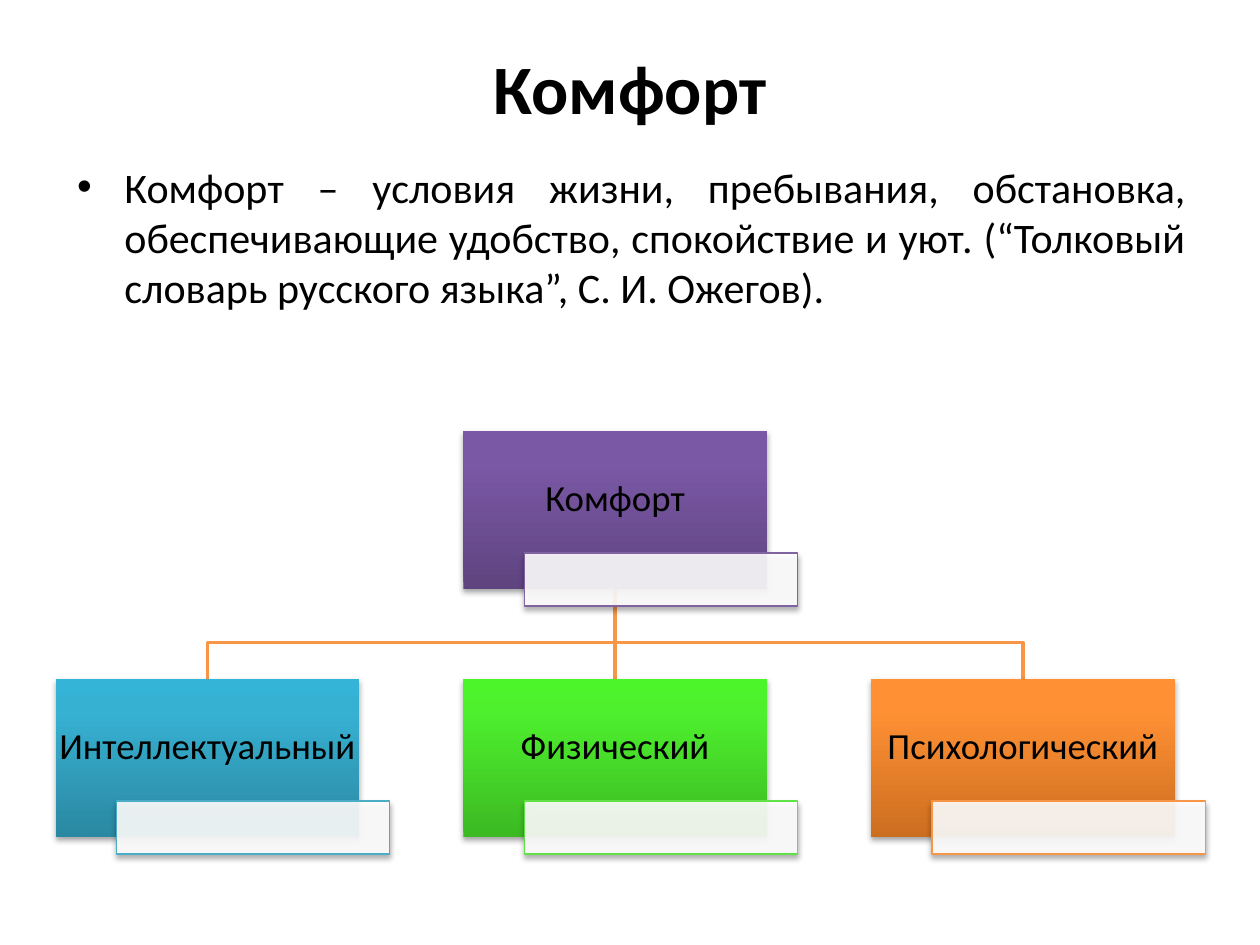
"""Build the slide on comfort and its three kinds."""
from lxml import etree
from pptx import Presentation
from pptx.dml.color import RGBColor
from pptx.enum.shapes import MSO_CONNECTOR, MSO_SHAPE
from pptx.enum.text import MSO_ANCHOR, PP_ALIGN
from pptx.oxml.ns import qn
from pptx.util import Cm, Pt

RECTANGLE, STRAIGHT = MSO_SHAPE.RECTANGLE, MSO_CONNECTOR.STRAIGHT
CENTER, JUSTIFY, MIDDLE = PP_ALIGN.CENTER, PP_ALIGN.JUSTIFY, MSO_ANCHOR.MIDDLE

TITLE = "Комфорт"
DEFINITION = (
    "Комфорт – условия жизни, пребывания, обстановка, обеспечивающие удобство, "
    "спокойствие и уют. (“Толковый словарь русского языка”, С. И. Ожегов)."
)
ROOT = ("Комфорт", "purple")
KINDS = [("Интеллектуальный", "blue"), ("Физический", "green"), ("Психологический", "orange")]

COLORS = {"text": "000000", "shadow": "000000", "tag": "FFFFFF", "branch": "F79646"}
GRADIENTS = {
    "purple": ("5F4480", "7B58A6", "7C57A8"),
    "blue": ("2A88A2", "37B1D2", "34B4D6"),
    "green": ("3CB923", "4EF02E", "4CF52A"),
    "orange": ("CC6E20", "FF9034", "FF9136"),
}
OUTLINES = {"purple": "8064A2", "blue": "4BACC6", "green": "60E146", "orange": "F79646"}
STOPS = (0, 80000, 100000)

BOX_WIDTH, BOX_HEIGHT = 6.12, 3.18
TAG_WIDTH, TAG_HEIGHT = 5.51, 1.07
TAG_RIGHT, TAG_DOWN = 1.23, 2.46
LEFT, STEP = 1.12, 8.22
ROOT_TOP, KINDS_TOP, BEND = 8.69, 13.69, 12.95


def rgb(hex_color):
    return RGBColor.from_string(hex_color)


def add_color(parent, hex_color, alpha=None):
    color = etree.SubElement(parent, qn("a:srgbClr"), val=hex_color)
    if alpha:
        etree.SubElement(color, qn("a:alpha"), val=str(alpha))


def add_shadow(shape):
    shape.shadow.inherit = False
    effects = shape._element.spPr.find(qn("a:effectLst"))
    shadow = etree.SubElement(
        effects, qn("a:outerShdw"), blurRad="40000", dist="23000", dir="5400000", rotWithShape="0"
    )
    add_color(shadow, COLORS["shadow"], 35000)


def format_text(frame, text, size, align, bold=False):
    frame.text = text
    paragraph = frame.paragraphs[0]
    paragraph.alignment = align
    font = paragraph.runs[0].font
    font.name, font.size, font.bold = "Calibri", Pt(size), bold
    font.color.rgb = rgb(COLORS["text"])
    return paragraph


def place(placeholder, left, top, width, height):
    placeholder.left, placeholder.top = Cm(left), Cm(top)
    placeholder.width, placeholder.height = Cm(width), Cm(height)


def add_rectangle(shapes, left, top, width, height):
    rectangle = shapes.add_shape(RECTANGLE, Cm(left), Cm(top), Cm(width), Cm(height))
    add_shadow(rectangle)
    return rectangle


def add_node(shapes, label, hue, left, top):
    box = add_rectangle(shapes, left, top, BOX_WIDTH, BOX_HEIGHT)
    box.line.fill.background()
    box.fill.gradient()
    box.fill.gradient_angle = 90
    stops = box._element.spPr.find(f".//{qn('a:gsLst')}")
    stops[:] = []
    for position, hex_color in zip(STOPS, GRADIENTS[hue]):
        add_color(etree.SubElement(stops, qn("a:gs"), pos=str(position)), hex_color)
    frame = box.text_frame
    frame.word_wrap, frame.vertical_anchor = True, MIDDLE
    frame.margin_left = frame.margin_right = frame.margin_top = Cm(0.03)
    frame.margin_bottom = Cm(0.46)
    format_text(frame, label, 21, CENTER).line_spacing = 0.9

    tag = add_rectangle(shapes, left + TAG_RIGHT, top + TAG_DOWN, TAG_WIDTH, TAG_HEIGHT)
    tag.fill.solid()
    tag.fill.fore_color.rgb = rgb(COLORS["tag"])
    tag_color = tag._element.spPr.find(f"{qn('a:solidFill')}/{qn('a:srgbClr')}")
    etree.SubElement(tag_color, qn("a:alpha"), val="90000")
    tag.line.color.rgb, tag.line.width = rgb(OUTLINES[hue]), Pt(0.75)


def add_branch(shapes, start, end):
    root_bottom = ROOT_TOP + BOX_HEIGHT
    if start == end:
        branch = shapes.add_connector(STRAIGHT, Cm(start), Cm(root_bottom), Cm(end), Cm(KINDS_TOP))
        etree.SubElement(branch._element.spPr, qn("a:effectLst"))
    else:
        builder = shapes.build_freeform(Cm(start), Cm(root_bottom))
        corners = [(start, BEND), (end, BEND), (end, KINDS_TOP)]
        builder.add_line_segments([(Cm(x), Cm(y)) for x, y in corners], close=False)
        branch = builder.convert_to_shape()
        branch.fill.background()
        branch.shadow.inherit = False
    branch.line.color.rgb, branch.line.width = rgb(COLORS["branch"]), Pt(2)


def main():
    deck = Presentation()
    deck.slide_width, deck.slide_height = Cm(25.4), Cm(19.05)
    slide = deck.slides.add_slide(deck.slide_layouts[1])
    shapes = slide.shapes
    title, body = slide.placeholders
    place(title, 1.27, 0.76, 22.86, 1.96)
    format_text(title.text_frame, TITLE, 39.6, CENTER, bold=True)
    place(body, 1.3, 3.12, 22.86, 3.81)
    format_text(body.text_frame, DEFINITION, 24, JUSTIFY)

    lefts = [LEFT + STEP * column for column in range(len(KINDS))]
    root_left = lefts[len(KINDS) // 2]
    for left in reversed(lefts):
        add_branch(shapes, root_left + BOX_WIDTH / 2, left + BOX_WIDTH / 2)
    add_node(shapes, *ROOT, root_left, ROOT_TOP)
    for (label, hue), left in zip(KINDS, lefts):
        add_node(shapes, label, hue, left, KINDS_TOP)
    deck.save("out.pptx")


if __name__ == "__main__":
    main()
